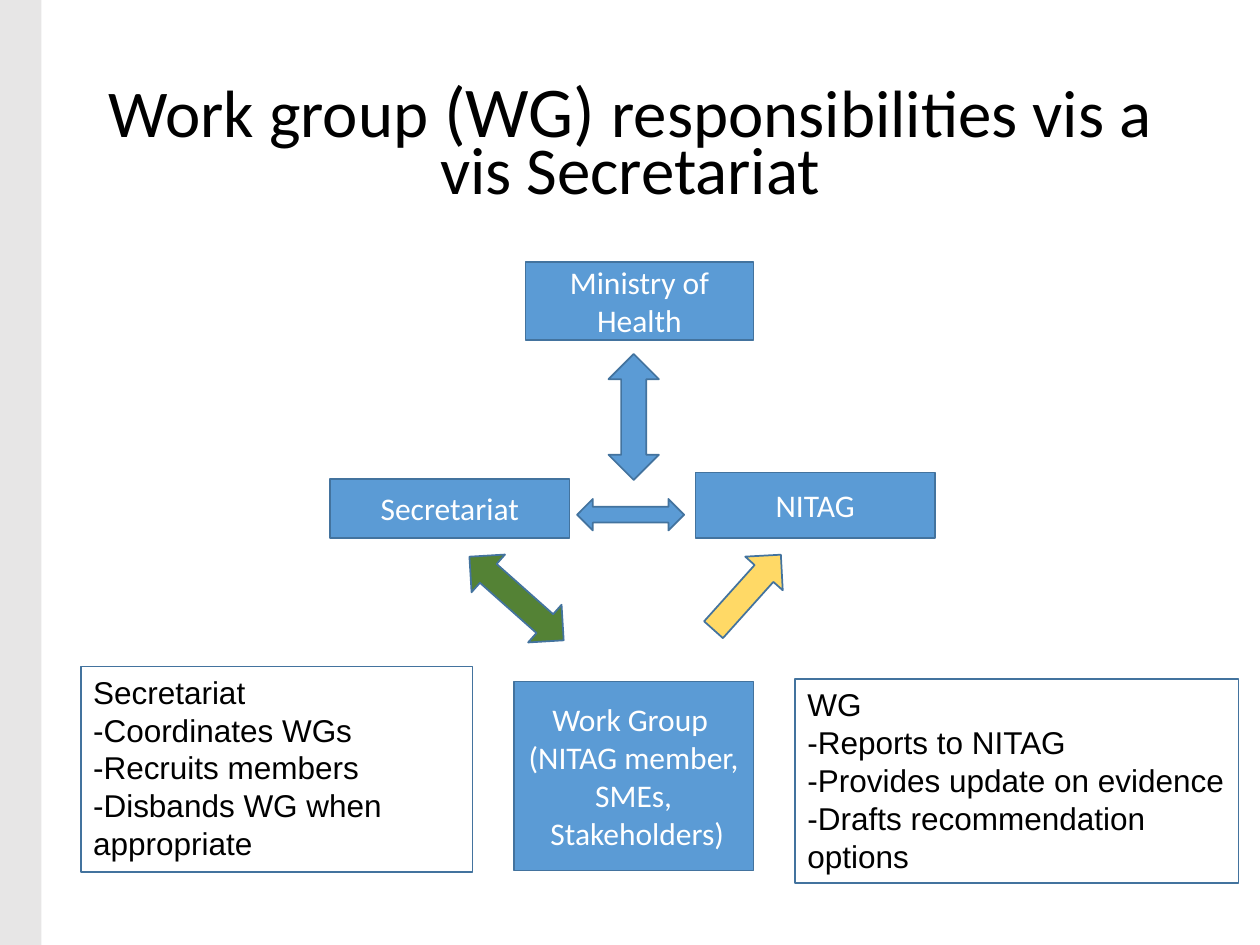
from dataclasses import dataclass

from pptx import Presentation
from pptx.dml.color import RGBColor
from pptx.enum.shapes import MSO_SHAPE
from pptx.enum.text import MSO_ANCHOR, MSO_AUTO_SIZE, PP_ALIGN
from pptx.util import Inches, Pt

COLORS = {
    "band": "E7E6E6", "blue": "5B9BD5", "edge": "43739E", "green": "548235",
    "gold": "FFD966", "white": "FFFFFF", "black": "000000",
}


@dataclass
class Box:
    at: tuple[float, float, float, float]
    lines: list[str]
    kind: MSO_SHAPE = MSO_SHAPE.RECTANGLE


@dataclass
class Arrow:
    at: tuple[float, float, float, float]
    fill: str = "blue"
    turn: float = 0
    kind: MSO_SHAPE = MSO_SHAPE.UP_DOWN_ARROW


# Organisations in the chart
UNITS = [
    Box((4.17, 2.08, 1.81, 0.62), ["Ministry of Health"],
        MSO_SHAPE.FLOWCHART_PROCESS),
    Box((5.52, 3.75, 1.9, 0.52), ["NITAG"]),
    Box((2.62, 3.8, 1.9, 0.47), ["Secretariat"]),
    Box((4.08, 5.41, 1.9, 1.5),
        ["Work Group ", "(NITAG member,", "SMEs,", " Stakeholders)"]),
]

# Links between them
ARROWS = [
    Arrow((4.83, 2.81, 0.4, 1)),
    Arrow((4.88, 3.66, 0.25, 0.85), turn=270),
    Arrow((3.9, 4.25, 0.4, 1), "green", 311.6),
    Arrow((5.53, 4.5, 0.8, 0.4), "gold", 311.9, MSO_SHAPE.RIGHT_ARROW),
]

# Lists of duties
NOTES = [
    Box((6.31, 5.39, 3.52, 1.62),
        ["WG", "-Reports to NITAG", "-Provides update on evidence",
         "-Drafts recommendation options"]),
    Box((0.64, 5.29, 3.11, 1.63),
        ["Secretariat", "-Coordinates WGs", "-Recruits members",
         "-Disbands WG when", "appropriate"]),
]

TITLE = [("Work group", 38.2), (" (WG) ", 40.8),
         ("responsibilities vis a vis Secretariat", 38.2)]


def rgb(name: str) -> RGBColor:
    return RGBColor.from_string(COLORS[name])


def add_run(para, text: str, size: float, font: str, color: str) -> None:
    run = para.add_run()
    run.text = text
    run.font.size = Pt(size)
    run.font.name = font
    run.font.color.rgb = rgb(color)


def inset(frame) -> None:
    frame.margin_left = frame.margin_right = Inches(0.07)
    frame.margin_top = frame.margin_bottom = Inches(0.04)


def add_shape(slide, kind: MSO_SHAPE, at: tuple, fill: str | None,
              edge: str | None = "edge"):
    shape = slide.shapes.add_shape(kind, *map(Inches, at))
    shape.shadow.inherit = False
    if fill:
        shape.fill.solid()
        shape.fill.fore_color.rgb = rgb(fill)
    else:
        shape.fill.background()
    if edge:
        shape.line.color.rgb = rgb(edge)
        shape.line.width = Pt(1)
    else:
        shape.line.fill.background()
    return shape


def write(frame, lines: list[str], font: str, color: str,
          align: PP_ALIGN) -> None:
    frame.word_wrap = True
    for i, line in enumerate(lines):
        para = frame.add_paragraph() if i else frame.paragraphs[0]
        para.alignment = align
        add_run(para, line, 18, font, color)


def add_unit(slide, box: Box) -> None:
    frame = add_shape(slide, box.kind, box.at, "blue").text_frame
    inset(frame)
    frame.vertical_anchor = MSO_ANCHOR.MIDDLE
    write(frame, box.lines, "Calibri", "white", PP_ALIGN.CENTER)


def add_arrow(slide, arrow: Arrow) -> None:
    shape = add_shape(slide, arrow.kind, arrow.at, arrow.fill)
    shape.rotation = arrow.turn


def add_note(slide, box: Box) -> None:
    frame = add_shape(slide, box.kind, box.at, None).text_frame
    frame.vertical_anchor = MSO_ANCHOR.TOP
    write(frame, box.lines, "Arial", "black", PP_ALIGN.LEFT)
    frame.auto_size = MSO_AUTO_SIZE.SHAPE_TO_FIT_TEXT


def set_title(slide) -> None:
    title = slide.shapes.title
    title.left, title.top, title.width, title.height = map(
        Inches, (0.69, 0.58, 8.62, 1.09))
    frame = title.text_frame
    inset(frame)
    frame.word_wrap = True
    frame.auto_size = MSO_AUTO_SIZE.NONE
    frame.vertical_anchor = MSO_ANCHOR.BOTTOM
    para = frame.paragraphs[0]
    para.alignment = PP_ALIGN.CENTER
    para.line_spacing = 0.7
    for text, size in TITLE:
        add_run(para, text, size, "Calibri", "black")


def main() -> None:
    deck = Presentation()
    deck.slide_width, deck.slide_height = Inches(10), Inches(7.5)
    slide = deck.slides.add_slide(deck.slide_layouts[5])

    # Side band and title
    add_shape(slide, MSO_SHAPE.RECTANGLE, (0, 0, 0.33, 7.5), "band", None)
    set_title(slide)

    # Chart and notes
    for unit in UNITS:
        add_unit(slide, unit)
    for arrow in ARROWS:
        add_arrow(slide, arrow)
    for note in NOTES:
        add_note(slide, note)

    deck.save("out.pptx")


if __name__ == "__main__":
    main()
